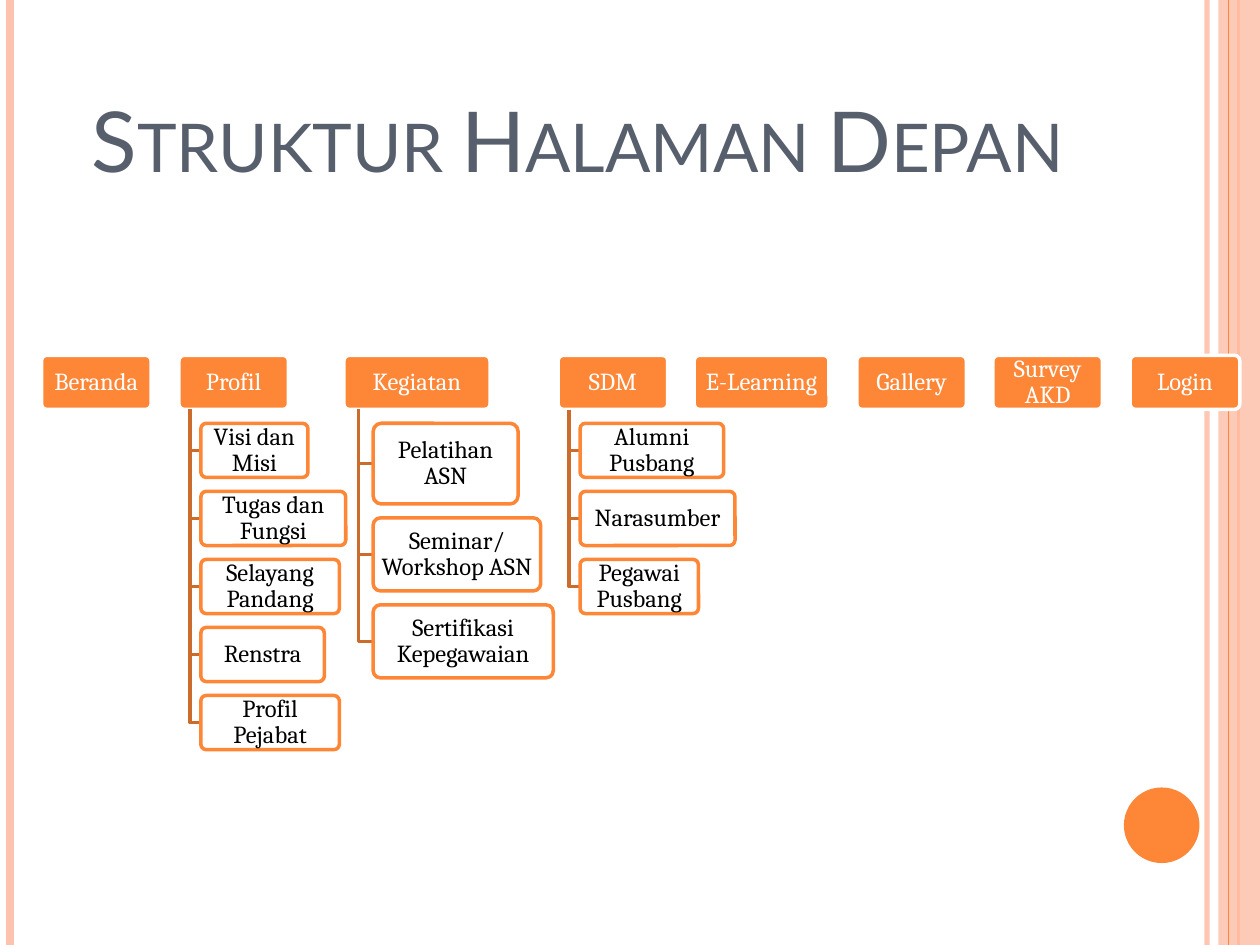
from lxml import etree
from pptx import Presentation
from pptx.dml.color import RGBColor
from pptx.enum.shapes import MSO_CONNECTOR, MSO_SHAPE
from pptx.enum.text import MSO_ANCHOR, MSO_AUTO_SIZE, PP_ALIGN
from pptx.oxml.ns import qn
from pptx.util import Inches, Pt

STRAIGHT = MSO_CONNECTOR.STRAIGHT
RECT, ROUND, OVAL = MSO_SHAPE.RECTANGLE, MSO_SHAPE.ROUNDED_RECTANGLE, MSO_SHAPE.OVAL
MIDDLE, BOTTOM = MSO_ANCHOR.MIDDLE, MSO_ANCHOR.BOTTOM
CENTER = PP_ALIGN.CENTER

ORANGE = RGBColor(0xFE, 0x86, 0x37)
PEACH = RGBColor(0xFE, 0xC3, 0xAE)
BROWN = RGBColor(0xCB, 0x6B, 0x2C)
SLATE = RGBColor(0x57, 0x5F, 0x6D)
WHITE = RGBColor(0xFF, 0xFF, 0xFF)
BLACK = RGBColor(0, 0, 0)

TITLE = "Struktur Halaman Depan"
SLIDE_W, SLIDE_H = 10, 7.5
BOX_W, BOX_H = 0.87, 0.43
MENU_TOP, GAP = 2.82, 0.11

MENUS = [
    ("Beranda", 0.33, BOX_W, []),
    ("Profil", 1.42, BOX_W, [
        ("Visi dan Misi", 0.85, BOX_H),
        ("Tugas dan Fungsi", 1.15, BOX_H),
        ("Selayang Pandang", 1.1, BOX_H),
        ("Renstra", 0.98, BOX_H),
        ("Profil Pejabat", 1.1, BOX_H),
    ]),
    ("Kegiatan", 2.73, 1.16, [
        ("Pelatihan ASN", 1.15, 0.64),
        ("Seminar/Workshop ASN", 1.33, 0.58),
        ("Sertifikasi Kepegawaian", 1.43, 0.58),
    ]),
    ("SDM", 4.43, BOX_W, [
        ("Alumni Pusbang", 1.14, BOX_H),
        ("Narasumber", 1.23, BOX_H),
        ("Pegawai Pusbang", 0.94, BOX_H),
    ]),
    ("E-Learning", 5.51, 1.07, []),
    ("Gallery", 6.8, BOX_W, []),
    ("Survey AKD", 7.88, BOX_W, []),
    ("Login", 8.97, BOX_W, []),
]

STRIPES = [(9.58, PEACH, 3, 93), (0.08, PEACH, 4.5, 100), (9.83, ORANGE, 1.5, 100)]
THIN_STRIPE = (9.75, ORANGE, 0.75, 100)


def set_alpha(fill_parent, percent):
    color = fill_parent.find(qn("a:solidFill"))[0]
    etree.SubElement(color, qn("a:alpha")).set("val", str(percent * 1000))


def add_stripe(x, color, width, opacity):
    c = s.shapes.add_connector(STRAIGHT, Inches(x), 0, Inches(x), Inches(SLIDE_H))
    c.line.color.rgb = color
    c.line.width = Pt(width)
    sp_pr = c._element.spPr
    set_alpha(sp_pr.find(qn("a:ln")), opacity)
    etree.SubElement(sp_pr, qn("a:effectLst"))


def add_shape(kind, x, y, w, h, fill, line=None, opacity=100):
    sp = s.shapes.add_shape(kind, Inches(x), Inches(y), Inches(w), Inches(h))
    sp.shadow.inherit = False
    sp.fill.solid()
    sp.fill.fore_color.rgb = fill
    if opacity < 100:
        set_alpha(sp._element.spPr, opacity)
    if line is None:
        sp.line.fill.background()
    else:
        sp.line.color.rgb = line
        sp.line.width = Pt(2)
    return sp


def add_box(text, x, y, w, h, fill, line, color, opacity=100):
    sp = add_shape(ROUND, x, y, w, h, fill, line, opacity)
    sp.adjustments[0] = 0.1
    tf = sp.text_frame
    tf.text = text
    tf.word_wrap = True
    tf.vertical_anchor = MIDDLE
    tf.margin_left = tf.margin_right = Inches(0.03)
    tf.margin_top = tf.margin_bottom = Inches(0.02)
    p = tf.paragraphs[0]
    p.alignment = CENTER
    p.line_spacing = 0.9
    font = p.runs[0].font
    font.name, font.size, font.color.rgb = "Cambria", Pt(14), color


def add_branch(trunk, top, x, y):
    builder = s.shapes.build_freeform(Inches(trunk), Inches(top))
    builder.add_line_segments(
        [(Inches(trunk), Inches(y)), (Inches(x), Inches(y))], close=False)
    sp = builder.convert_to_shape()
    sp.shadow.inherit = False
    sp.fill.background()
    sp.line.color.rgb = BROWN
    sp.line.width = Pt(2)


prs = Presentation()
prs.slide_width, prs.slide_height = Inches(SLIDE_W), Inches(SLIDE_H)
s = prs.slides.add_slide(prs.slide_layouts[5])

for stripe in STRIPES:
    add_stripe(*stripe)
add_shape(RECT, 9.67, 0, 0.33, SLIDE_H, PEACH, opacity=87)
add_stripe(*THIN_STRIPE)
add_shape(OVAL, 8.92, 6.25, 0.6, 0.6, ORANGE)

title = s.shapes.title
title.left, title.top = Inches(0.5), Inches(0.3)
title.width, title.height = Inches(8.17), Inches(1.25)
tf = title.text_frame
tf.text = TITLE
tf.word_wrap = True
tf.auto_size = MSO_AUTO_SIZE.NONE
tf.vertical_anchor = BOTTOM
p = tf.paragraphs[0]
p.alignment = CENTER
r = p.runs[0]
r.font.name, r.font.size, r.font.color.rgb = "Lato", Pt(48), SLATE
r.font._element.set("cap", "small")

for name, left, width, children in MENUS:
    add_box(name, left, MENU_TOP, width, BOX_H, ORANGE, WHITE, WHITE)
    bottom = MENU_TOP + BOX_H
    trunk, child_left = left + 0.1 * width, left + 0.2 * width
    y = bottom + GAP
    for text, w, h in children:
        add_branch(trunk, bottom, child_left, y + h / 2)
        add_box(text, child_left, y, w, h, WHITE, ORANGE, BLACK, 90)
        y += h + GAP

prs.save("out.pptx")
